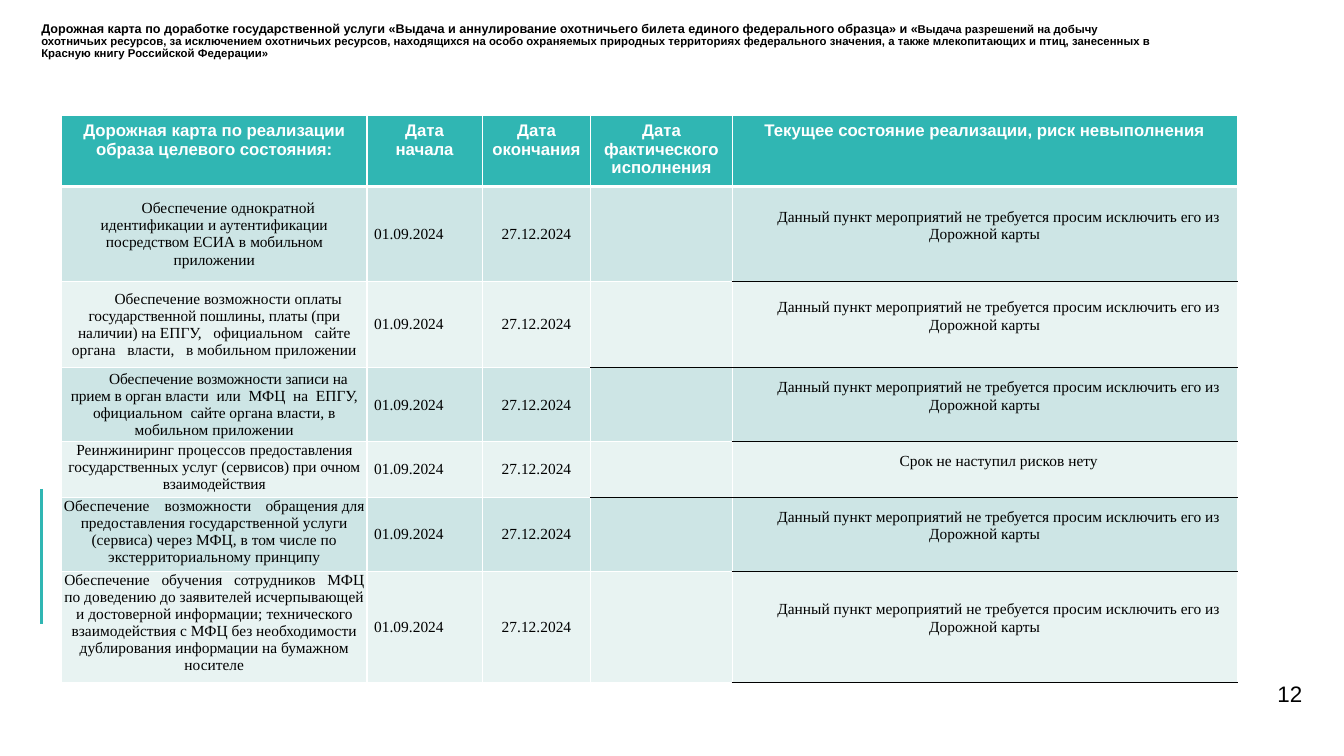
from dataclasses import dataclass

from lxml import etree
from pptx import Presentation
from pptx.dml.color import RGBColor
from pptx.enum.shapes import MSO_CONNECTOR
from pptx.enum.text import MSO_ANCHOR, MSO_AUTO_SIZE, PP_ALIGN
from pptx.oxml.ns import qn
from pptx.util import Cm, Pt

LEFT, MID, RIGHT = PP_ALIGN.LEFT, PP_ALIGN.CENTER, PP_ALIGN.RIGHT
TOP, CENTER = MSO_ANCHOR.TOP, MSO_ANCHOR.MIDDLE
STRAIGHT = MSO_CONNECTOR.STRAIGHT
FIXED = MSO_AUTO_SIZE.NONE


@dataclass(frozen=True)
class Theme:
    teal: str = "30B6B3"
    dark: str = "CDE5E5"
    light: str = "E8F3F2"
    white: str = "FFFFFF"
    black: str = "000000"
    sans: str = "Arial"
    serif: str = "Times New Roman"
    title: float = 9
    small: float = 8.1
    head: float = 12
    body: float = 11
    page: float = 16


T = Theme()


def write(par, text, font, size, color=T.black, bold=False, track=0):
    """Add one run; track is the letter spacing in points."""
    run = par.add_run()
    run.text = text
    run.font.name = font
    run.font.size = Pt(size)
    run.font.bold = bold
    run.font.color.rgb = RGBColor.from_string(color)
    if track:
        run.font._element.set("spc", str(round(track * 100)))


def edge(cell, side, color, width):
    """Draw one border of a cell; side is L, R, T or B."""
    line = etree.SubElement(cell._tc.get_or_add_tcPr(), qn("a:ln" + side),
                            w=str(Pt(width)))
    fill = etree.SubElement(line, qn("a:solidFill"))
    etree.SubElement(fill, qn("a:srgbClr"), val=color)


deck = Presentation()
deck.slide_width, deck.slide_height = Cm(33.87), Cm(19.05)
slide = deck.slides.add_slide(deck.slide_layouts[5])

# Title
title = slide.shapes.title
title.left, title.top, title.width, title.height = Cm(1.04), Cm(0.56), Cm(28.07), Cm(1)
frame = title.text_frame
frame.auto_size = FIXED
frame.word_wrap = True
frame.vertical_anchor = TOP
frame.margin_left = frame.margin_right = frame.margin_top = frame.margin_bottom = 0
par = frame.paragraphs[0]
par.alignment = LEFT
par.line_spacing = 0.9
write(par, "Дорожная карта по доработке государственной услуги «Выдача и "
      "аннулирование охотничьего билета единого федерального образца» и «",
      T.sans, T.title, bold=True)
write(par, "Выдача разрешений на добычу охотничьих ресурсов, за исключением "
      "охотничьих ресурсов, находящихся на особо охраняемых природных "
      "территориях федерального значения, а также млекопитающих и птиц, "
      "занесенных в Красную книгу Российской Федерации»",
      T.sans, T.small, bold=True)

# Page number
page = slide.shapes.add_textbox(Cm(30.12), Cm(16.92), Cm(2.7), Cm(1.1))
frame = page.text_frame
frame.word_wrap = True
frame.vertical_anchor = CENTER
frame.margin_left = frame.margin_right = frame.margin_top = frame.margin_bottom = 0
frame.paragraphs[0].alignment = RIGHT
write(frame.paragraphs[0], "12", T.sans, T.page)

# Accent line
bar = slide.shapes.add_connector(STRAIGHT, Cm(1.04), Cm(12.32), Cm(1.04), Cm(15.72))
bar.line.color.rgb = RGBColor.from_string(T.teal)
bar.line.width = Pt(2.25)
etree.SubElement(bar._element.spPr, qn("a:effectLst"))

# Road map: "_" marks a gap widened by the given points
START, END = "01.09.2024", "27.12.2024"
DROP = "Данный пункт мероприятий не требуется просим исключить его из Дорожной карты"
WAIT = "Срок не наступил рисков нету"
TIGHT = -0.1
heads = ["Дорожная карта по реализации образа целевого состояния:", "Дата начала",
         "Дата окончания", "Дата фактического исполнения",
         "Текущее состояние реализации, риск невыполнения"]
tasks = [
    (2.4, 0, DROP, [
        ("Обеспечение однократной идентификации ", 0), ("и ", TIGHT),
        ("аутентификации посредством ЕСИА в ", 0), ("мобильном ", TIGHT),
        ("приложении", 0)]),
    (2.17, 5.5, DROP, [
        ("Обеспечение возможности оплаты ", 0),
        ("государственной пошлины, платы (при наличии) на ", TIGHT),
        ("ЕПГУ,_официальном_сайте_органа_власти,_в мобильном приложении", 0)]),
    (1.85, 2.75, DROP, [
        ("Обеспечение возможности записи на прием в орган ", TIGHT),
        ("власти_или_МФЦ_на_ЕПГУ,_официальном_", 0), ("сайте ", TIGHT),
        ("органа власти, в мобильном приложении", 0)]),
    (1.3, 0, WAIT, [
        ("Реинжиниринг процессов ", 0),
        ("предоставления государственных услуг (сервисов) при очном "
         "взаимодействия", TIGHT)]),
    (1.74, 0, DROP, [
        ("Обеспечение \tвозможности \tобращения для предоставления "
         "государственной услуги (сервиса) через МФЦ, в том числе по "
         "экстерриториальному принципу", 0)]),
    (2.6, 5.5, DROP, [
        ("Обеспечение_обучения_сотрудников_МФЦ_по доведению до заявителей "
         "исчерпывающей и достоверной информации; ", 0),
        ("технического ", TIGHT),
        ("взаимодействия с МФЦ без необходимости дублирования информации "
         "на бумажном носителе", 0)]),
]
wides = [7.7, 2.9, 2.74, 3.56, 12.73]
FACT, STATE = 3, 4
ruled = {(row, STATE) for row in range(1, 7)} | {(2, FACT), (4, FACT)}

grid = slide.shapes.add_table(len(tasks) + 1, len(wides), Cm(1.55), Cm(2.92),
                              Cm(sum(wides)), Cm(13.72)).table
for col, wide in zip(grid.columns, wides):
    col.width = Cm(wide)
for row, tall in zip(grid.rows, [1.66] + [task[0] for task in tasks]):
    row.height = Cm(tall)

for y in range(len(tasks) + 1):
    for x in range(len(wides)):
        cell = grid.cell(y, x)
        edge(cell, "L", T.white, 1)
        edge(cell, "R", T.white, 1)
        edge(cell, "T", T.black if (y - 1, x) in ruled else T.white, 3 if y == 1 else 1)
        edge(cell, "B", T.black if (y, x) in ruled else T.white, 1 if y else 3)
        cell.fill.solid()
        tint = (T.dark if y % 2 else T.light) if y else T.teal
        cell.fill.fore_color.rgb = RGBColor.from_string(tint)
        par = cell.text_frame.paragraphs[0]
        par.alignment = LEFT if y and x == 1 else MID
        if y == 0:
            write(par, heads[x], T.sans, T.head, T.white, True)
            continue
        tall, gap, state, runs = tasks[y - 1]
        flush = x == 0 and y > 3
        cell.vertical_anchor = TOP if flush else CENTER
        cell.margin_left = cell.margin_right = Cm(0 if flush else 0.18)
        cell.margin_top = 0
        cell.margin_bottom = Cm(0.43 if x == STATE else 0)
        if x == STATE or x == 0 and not flush:
            par._p.get_or_add_pPr().set("indent", str(Cm(0.71)))
        if x == 0:
            for text, track in runs:
                for n, bit in enumerate(text.split("_")):
                    if n:
                        write(par, " ", T.serif, T.body, track=gap)
                    if bit:
                        write(par, bit, T.serif, T.body, track=track)
        elif x != FACT:
            write(par, {1: START, 2: END, STATE: state}[x], T.serif, T.body)

deck.save("out.pptx")
